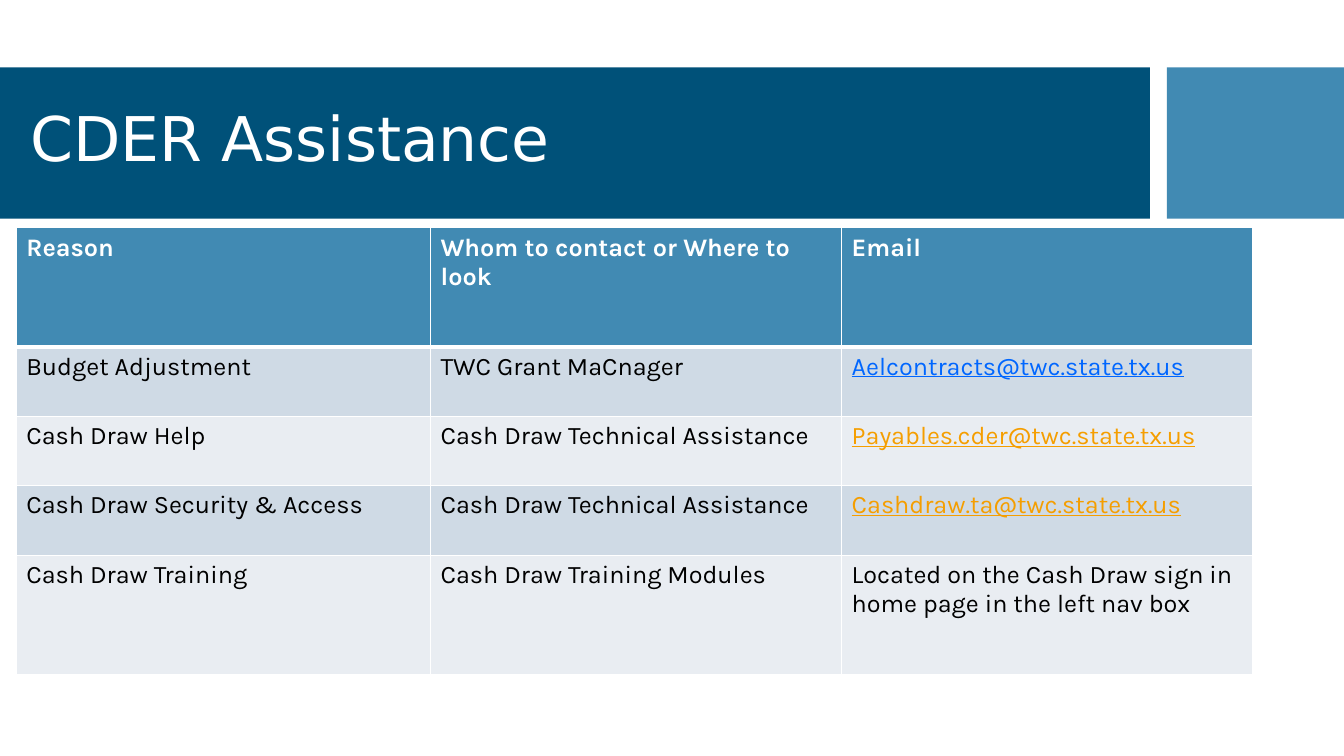
from dataclasses import dataclass

import pptx
import pptx.dml.color
import pptx.enum.shapes
import pptx.enum.text
import pptx.oxml
import pptx.oxml.ns
import pptx.util
from pptx.util import Cm


@dataclass(frozen=True)
class Theme:
    navy: str = "005179"
    blue: str = "418AB3"
    white: str = "FFFFFF"
    black: str = "000000"
    link_blue: str = "0066FF"
    link_orange: str = "F59E00"
    bands: tuple = ("CFDAE5", "E9EDF2")
    title_font: str = "DejaVu Sans"
    body_font: str = "Karla"
    title_size: int = 44
    body_size: int = 18
    thin_rule: int = 1
    header_rule: int = 3


THEME = Theme()

HEADINGS = ("Reason", "Whom to contact or Where to look", "Email")
CONTACTS = (
    ("Budget Adjustment", "TWC Grant MaCnager", "Aelcontracts@twc.state.tx.us"),
    ("Cash Draw Help", "Cash Draw Technical Assistance", "Payables.cder@twc.state.tx.us"),
    ("Cash Draw Security & Access", "Cash Draw Technical Assistance", "Cashdraw.ta@twc.state.tx.us"),
    ("Cash Draw Training", "Cash Draw Training Modules",
     "Located on the Cash Draw sign in home page in the left nav box"),
)
EMAIL_COLORS = (THEME.link_blue, THEME.link_orange, THEME.link_orange, None)
COLUMN_WIDTHS = (10.44, 10.36, 10.36)
ROW_HEIGHTS = (3, 1.75, 1.75, 1.75, 3)


def rgb(color):
    return pptx.dml.color.RGBColor.from_string(color)


def add_span(para, text, font, size, color, bold=False, underline=False):
    span = para.add_run()
    span.text = text
    span.font.name = font
    span.font.size = pptx.util.Pt(size)
    span.font.color.rgb = rgb(color)
    span.font.bold = bold
    span.font.underline = underline


def add_band(page, left, width, color):
    """Draw one block of the strip behind the title."""
    band = page.shapes.add_shape(
        pptx.enum.shapes.MSO_SHAPE.RECTANGLE, Cm(left), Cm(1.7), Cm(width), Cm(3.81))
    band.shadow.inherit = False
    band.fill.solid()
    band.fill.fore_color.rgb = rgb(color)
    band.line.fill.background()


def add_title(page, text):
    box = page.shapes.add_textbox(Cm(0.51), Cm(2.08), Cm(28.09), Cm(3))
    frame = box.text_frame
    frame.word_wrap = True
    frame.vertical_anchor = pptx.enum.text.MSO_ANCHOR.MIDDLE
    para = frame.paragraphs[0]
    para.line_spacing = 0.9
    add_span(para, text, THEME.title_font, THEME.title_size, THEME.white)


def set_borders(cell, top, bottom):
    """Rule all four sides in white; top and bottom are widths in points."""
    properties = cell._tc.get_or_add_tcPr()
    sides = {"lnL": THEME.thin_rule, "lnR": THEME.thin_rule, "lnT": top, "lnB": bottom}
    for side, width in sides.items():
        properties.append(pptx.oxml.parse_xml(
            f'<a:{side} {pptx.oxml.ns.nsdecls("a")} w="{pptx.util.Pt(width)}">'
            f'<a:solidFill><a:srgbClr val="{THEME.white}"/></a:solidFill></a:{side}>'))


def fill_cell(cell, text, fill, color, top, bottom, bold=False, underline=False):
    set_borders(cell, top, bottom)
    cell.fill.solid()
    cell.fill.fore_color.rgb = rgb(fill)
    add_span(cell.text_frame.paragraphs[0], text, THEME.body_font, THEME.body_size,
             color, bold, underline)


def add_contact_table(page):
    frame = page.shapes.add_table(
        len(ROW_HEIGHTS), len(COLUMN_WIDTHS), Cm(0.41), Cm(5.74),
        Cm(sum(COLUMN_WIDTHS)), Cm(sum(ROW_HEIGHTS)))
    table = frame.table
    table.horz_banding = False
    for column, width in zip(table.columns, COLUMN_WIDTHS):
        column.width = Cm(width)
    for row, height in zip(table.rows, ROW_HEIGHTS):
        row.height = Cm(height)

    for column, heading in enumerate(HEADINGS):
        fill_cell(table.cell(0, column), heading, THEME.blue, THEME.white,
                  THEME.thin_rule, THEME.header_rule, bold=True)

    for index, (contact, email_color) in enumerate(zip(CONTACTS, EMAIL_COLORS)):
        fill = THEME.bands[index % 2]
        top = THEME.thin_rule if index else THEME.header_rule
        for column, text in enumerate(contact):
            is_email = HEADINGS[column] == "Email" and email_color is not None
            fill_cell(table.cell(index + 1, column), text, fill,
                      email_color if is_email else THEME.black,
                      top, THEME.thin_rule, underline=is_email)


def main():
    deck = pptx.Presentation()
    deck.slide_width, deck.slide_height = Cm(33.87), Cm(19.05)
    page = deck.slides.add_slide(deck.slide_layouts[6])
    add_band(page, 0, 28.98, THEME.navy)
    add_band(page, 29.41, 4.46, THEME.blue)
    add_title(page, "CDER Assistance")
    add_contact_table(page)
    deck.save("out.pptx")


if __name__ == "__main__":
    main()
